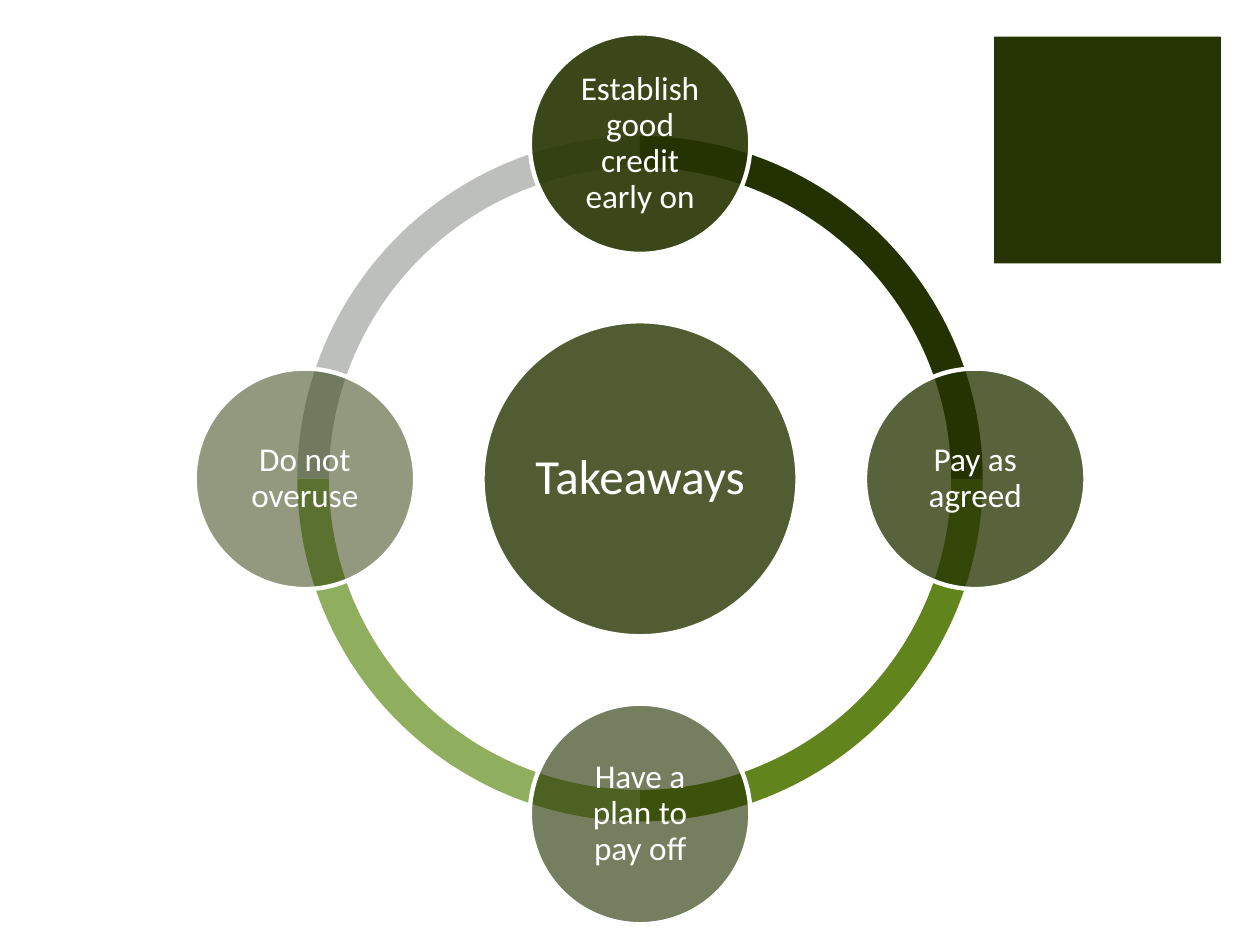
import math
from dataclasses import dataclass

from lxml import etree
from pptx import Presentation
from pptx.dml.color import RGBColor
from pptx.enum import shapes, text
from pptx.oxml import ns
from pptx.util import Inches, Pt


@dataclass(frozen=True)
class Theme:
    font: str = "Calibri"
    dark: str = "263401"
    light: str = "FFFFFF"
    hub_size: int = 28
    node_size: int = 19
    outline: float = 2.5


THEME = Theme()
CENTER_X, CENTER_Y = 5.08, 3.8
RING_DIAMETER, RING_THICKNESS = 5.44, 0.046
ORBIT = 2.66
HUB_DIAMETER, NODE_DIAMETER = 2.5, 1.75

# Start angle in degrees, clockwise from the right, and colour
RING_QUARTERS = [(180, "BDBFBC"), (90, "90AF5E"), (0, "62841C"), (270, "243201")]

# Wording and opacity in percent, clockwise from the top
TAKEAWAYS = [
    ("Establish good credit early on", 90),
    ("Pay as agreed", 77),
    ("Have a plan to pay off", 63),
    ("Do not overuse", 50),
]


def add_filled_shape(parent, kind, left, top, width, height, color):
    shape = parent.shapes.add_shape(
        kind, Inches(left), Inches(top), Inches(width), Inches(height))
    shape.shadow.inherit = False
    shape.fill.solid()
    shape.fill.fore_color.rgb = RGBColor.from_string(color)
    shape.line.fill.background()
    return shape


def add_centered(parent, kind, x, y, diameter, color):
    """Add a shape as wide as it is high, placed by its centre."""
    return add_filled_shape(parent, kind, x - diameter / 2, y - diameter / 2,
                            diameter, diameter, color)


def set_opacity(shape, percent):
    color = shape.fill._xPr.find(ns.qn("a:solidFill"))[0]
    etree.SubElement(color, ns.qn("a:alpha"), val=str(percent * 1000))


def add_ring_quarter(parent, start, color):
    arc = add_centered(parent, shapes.MSO_SHAPE.BLOCK_ARC, CENTER_X, CENTER_Y,
                       RING_DIAMETER, color)
    # Angles are stored in 60000ths of a degree, adjustments in 100000ths
    arc.adjustments[0] = start * 0.6
    arc.adjustments[1] = (start + 90) % 360 * 0.6
    arc.adjustments[2] = RING_THICKNESS


def add_circle(parent, x, y, diameter, wording, size, opacity, inset):
    circle = add_centered(parent, shapes.MSO_SHAPE.OVAL, x, y, diameter, THEME.dark)
    set_opacity(circle, opacity)
    circle.line.color.rgb = RGBColor.from_string(THEME.light)
    circle.line.width = Pt(THEME.outline)

    frame = circle.text_frame
    frame.text = wording
    frame.word_wrap = True
    frame.vertical_anchor = text.MSO_ANCHOR.MIDDLE
    frame.margin_left = frame.margin_right = Inches(inset)
    frame.margin_top = frame.margin_bottom = Inches(inset)
    paragraph = frame.paragraphs[0]
    paragraph.alignment = text.PP_ALIGN.CENTER
    paragraph.line_spacing = 0.9
    font = paragraph.runs[0].font
    font.name = THEME.font
    font.size = Pt(size)
    font.color.rgb = RGBColor.from_string(THEME.light)


def add_cycle(slide):
    cycle = slide.shapes.add_group_shape()
    for start, color in RING_QUARTERS:
        add_ring_quarter(cycle, start, color)
    add_circle(cycle, CENTER_X, CENTER_Y, HUB_DIAMETER, "Takeaways",
               THEME.hub_size, 80, 0.04)
    for index, (wording, opacity) in enumerate(TAKEAWAYS):
        angle = math.tau * index / len(TAKEAWAYS)
        add_circle(cycle, CENTER_X + ORBIT * math.sin(angle),
                   CENTER_Y - ORBIT * math.cos(angle), NODE_DIAMETER, wording,
                   THEME.node_size, opacity, 0.03)


def main():
    presentation = Presentation()
    presentation.slide_width, presentation.slide_height = Inches(10), Inches(7.5)
    slide = presentation.slides.add_slide(presentation.slide_layouts[6])
    add_filled_shape(slide, shapes.MSO_SHAPE.RECTANGLE, 7.89, 0.29, 1.8, 1.8, THEME.dark)
    add_cycle(slide)
    presentation.save("out.pptx")


if __name__ == "__main__":
    main()
